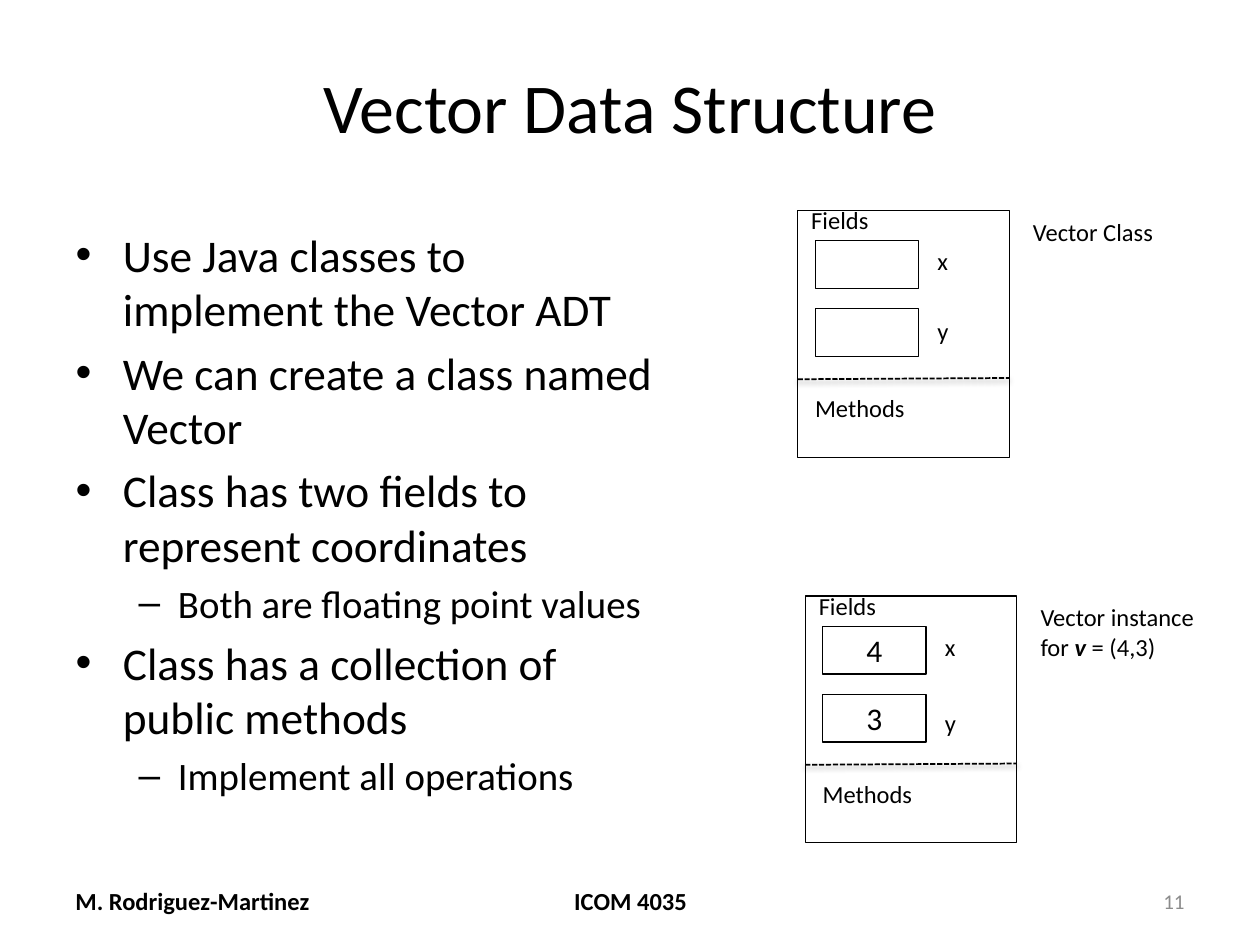
from lxml.etree import SubElement
from pptx import Presentation
from pptx.dml.color import RGBColor
from pptx.enum.dml import MSO_LINE
from pptx.enum.shapes import MSO_CONNECTOR, MSO_SHAPE
from pptx.enum.text import MSO_ANCHOR, MSO_AUTO_SIZE, PP_ALIGN
from pptx.oxml.ns import qn
from pptx.util import Inches, Pt


def color(value):
    return RGBColor.from_string(value)


class SlideBuilder:
    font = "Calibri"
    ink = "000000"
    paper = "FFFFFF"
    muted = "8C8C8C"
    label_size = 14

    def __init__(self, slide):
        self.slide = slide

    def add_run(self, paragraph, text, size, bold=None, italic=None, ink=None):
        run = paragraph.add_run()
        run.text = text
        run.font.name = self.font
        run.font.size = Pt(size)
        run.font.bold = bold
        run.font.italic = italic
        run.font.color.rgb = color(ink or self.ink)

    def place(self, shape, left, top, width, height):
        shape.left, shape.top = Inches(left), Inches(top)
        shape.width, shape.height = Inches(width), Inches(height)

    def title(self, text):
        shape = self.slide.shapes.title
        self.place(shape, 0.5, 0.3, 9, 1.07)
        frame = shape.text_frame
        frame.auto_size = MSO_AUTO_SIZE.NONE
        frame.vertical_anchor = MSO_ANCHOR.MIDDLE
        self.add_run(frame.paragraphs[0], text, 40)

    def bullets(self, items):
        shape = self.slide.placeholders[1]
        self.place(shape, 0.5, 1.75, 4.96, 4.95)
        frame = shape.text_frame
        frame.auto_size = MSO_AUTO_SIZE.NONE
        for index, (level, text) in enumerate(items):
            paragraph = frame.add_paragraph() if index else frame.paragraphs[0]
            paragraph.level = level
            self.add_run(paragraph, text, (25.9, 22.2)[level])

    def box(self, left, top, width, height, text=""):
        shape = self.slide.shapes.add_shape(
            MSO_SHAPE.RECTANGLE, Inches(left), Inches(top), Inches(width), Inches(height))
        shape.shadow.inherit = False
        shape.fill.solid()
        shape.fill.fore_color.rgb = color(self.paper)
        shape.line.color.rgb = color(self.ink)
        shape.line.width = Pt(0.75)
        if text:
            paragraph = shape.text_frame.paragraphs[0]
            paragraph.alignment = PP_ALIGN.CENTER
            self.add_run(paragraph, text, 18)

    def label(self, left, top, width, *lines):
        height = 0.34 + 0.23 * (len(lines) - 1)
        shape = self.slide.shapes.add_textbox(
            Inches(left), Inches(top), Inches(width), Inches(height))
        frame = shape.text_frame
        frame.word_wrap = False
        frame.auto_size = MSO_AUTO_SIZE.SHAPE_TO_FIT_TEXT
        for index, runs in enumerate(lines):
            paragraph = frame.add_paragraph() if index else frame.paragraphs[0]
            for text, emphasis in runs:
                self.add_run(paragraph, text, self.label_size, emphasis, emphasis)

    def divider(self, left, top, width):
        line = self.slide.shapes.add_connector(
            MSO_CONNECTOR.STRAIGHT, Inches(left), Inches(top),
            Inches(left + width), Inches(top - 0.01))
        line.line.color.rgb = color(self.ink)
        line.line.width = Pt(1)
        line.line.dash_style = MSO_LINE.SQUARE_DOT
        effects = SubElement(line._element.spPr, qn("a:effectLst"))
        shadow = SubElement(
            effects, qn("a:outerShdw"), blurRad=str(Pt(3.1)), dist=str(Pt(1.6)),
            dir="5400000", rotWithShape="0")
        shade = SubElement(shadow, qn("a:srgbClr"), val=self.ink)
        SubElement(shade, qn("a:alpha"), val="38000")

    def footer(self, left, width, text, alignment, size=14, bold=True, ink=None):
        shape = self.slide.shapes.add_textbox(
            Inches(left), Inches(6.95), Inches(width), Inches(0.4))
        frame = shape.text_frame
        frame.word_wrap = True
        frame.vertical_anchor = MSO_ANCHOR.MIDDLE
        paragraph = frame.paragraphs[0]
        paragraph.alignment = alignment
        self.add_run(paragraph, text, size, bold, ink=ink)

    def class_diagram(self, left, top, fields, caption_width, caption):
        width = 1.68
        self.box(left, top, width, 1.96)
        for index, (name, value, name_offset) in enumerate(fields):
            self.box(left + 0.14, top + 0.24 + 0.54 * index, 0.82, 0.38, value)
            self.label(left + 1.01, top + name_offset, 0.29, [(name, None)])
        self.label(left + 0.01, top - 0.09, 0.66, [("Fields", None)])
        self.divider(left, top + 1.34, width)
        self.label(left + 0.04, top + 1.4, 0.92, [("Methods", None)])
        self.label(left + 1.77, top, caption_width, *caption)


def main():
    presentation = Presentation()
    presentation.slide_width = Inches(10)
    presentation.slide_height = Inches(7.5)
    builder = SlideBuilder(presentation.slides.add_slide(presentation.slide_layouts[1]))

    builder.title("Vector Data Structure")
    builder.bullets([
        (0, "Use Java classes to implement the Vector ADT"),
        (0, "We can create a class named Vector"),
        (0, "Class has two fields to represent coordinates"),
        (1, "Both are floating point values"),
        (0, "Class has a collection of public methods"),
        (1, "Implement all operations"),
    ])
    builder.class_diagram(
        6.33, 1.67, [("x", "", 0.23), ("y", "", 0.79)],
        1.17, [[("Vector Class", None)]])
    builder.class_diagram(
        6.39, 4.73, [("x", "4", 0.24), ("y", "3", 0.84)],
        1.45, [[("Vector instance", None)],
               [("for ", None), ("v", True), (" = (4,3)", None)]])
    builder.footer(3.42, 3.17, "ICOM 4035", PP_ALIGN.CENTER)
    builder.footer(0.5, 2.33, "M. Rodriguez-Martinez", PP_ALIGN.LEFT)
    builder.footer(7.17, 2.33, "11", PP_ALIGN.RIGHT, 12, False, builder.muted)
    presentation.save("out.pptx")


if __name__ == "__main__":
    main()
